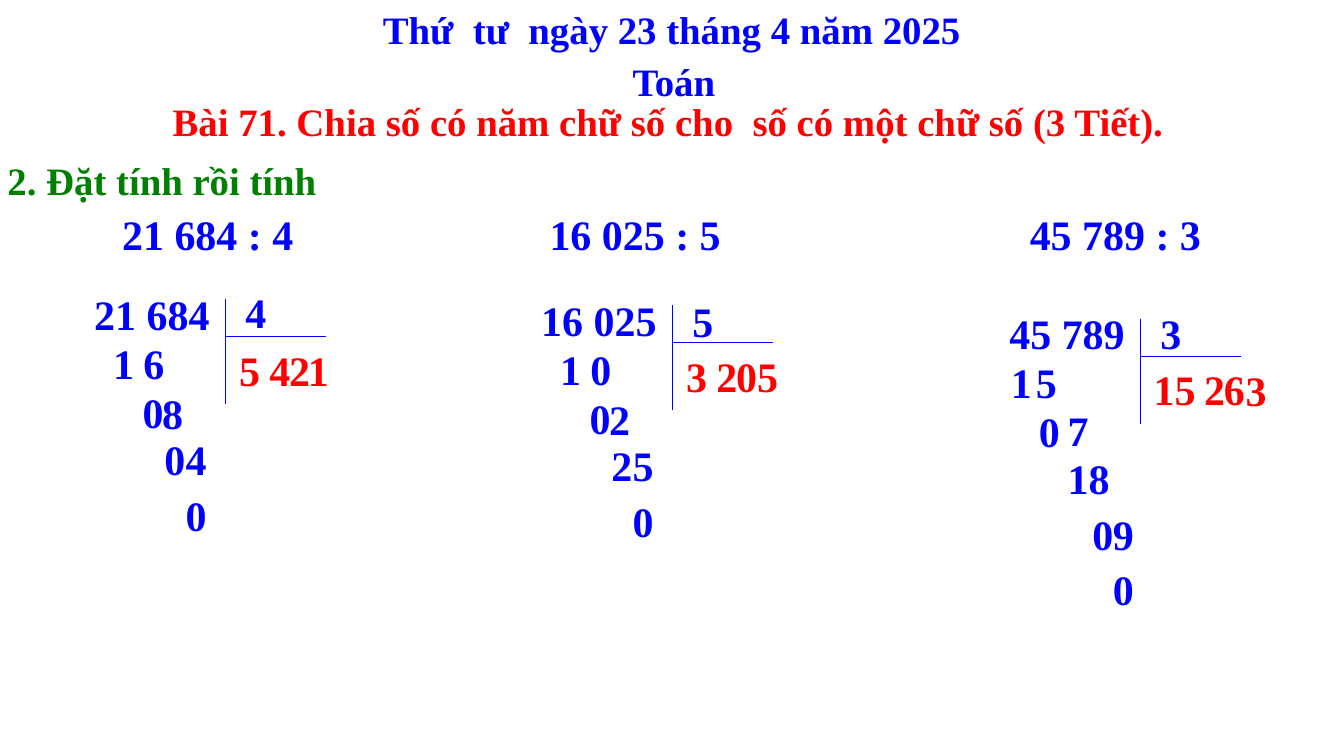
from dataclasses import dataclass

from lxml.etree import SubElement
from pptx import Presentation
from pptx.dml.color import RGBColor
from pptx.enum.shapes import MSO_CONNECTOR
from pptx.enum.text import MSO_ANCHOR, MSO_AUTO_SIZE, PP_ALIGN
from pptx.oxml.ns import qn
from pptx.util import Inches, Pt


@dataclass(frozen=True)
class Theme:
    font: str = "Times New Roman"
    blue: RGBColor = RGBColor(0x00, 0x00, 0xFF)
    red: RGBColor = RGBColor(0xFF, 0x00, 0x00)
    green: RGBColor = RGBColor(0x00, 0x80, 0x00)
    heading: int = 37
    number: int = 40
    rule: float = 0.75


THEME = Theme()
DIGIT_WIDTH = 0.5
NUMBER_HEIGHT = 0.77
BAR = 1.83
QUOTIENT_TOP = 0.74


@dataclass(frozen=True)
class Division:
    left: float
    top: float
    dividend: str
    divisor: str
    divisor_shift: float
    digits: str
    cells: list


def short_cells(units):
    """Digit offsets for a four-digit quotient, in stacking order."""
    return [
        (1.92, QUOTIENT_TOP), (2.58, QUOTIENT_TOP), (units, QUOTIENT_TOP),
        (0.25, 0.65), (0.65, 0.65), (0.93, 1.92), (0.9, 1.31), (0.64, 1.3),
        (1.21, 1.92), (1.21, 2.66), (2.32, QUOTIENT_TOP),
    ]


# Digit offsets for a five-digit quotient, in stacking order
LONG_CELLS = [
    (1.91, QUOTIENT_TOP), (2.58, QUOTIENT_TOP), (2.84, QUOTIENT_TOP),
    (0.02, 0.65), (0.35, 0.65), (0.77, 1.92), (0.77, 1.28), (0.39, 1.29),
    (1.05, 1.92), (1.1, 2.66), (2.19, QUOTIENT_TOP), (1.37, 2.66),
    (3.13, 0.75), (1.37, 3.38),
]

DIVISIONS = [
    Division(1.15, 3.77, "21 684", "4", -0.03, "52116080404", short_cells(2.83)),
    Division(7.07, 3.85, "16 025", "5", 0.02, "30510220502", short_cells(2.86)),
    Division(13.27, 4.03, "45 789", "3", -0.01, "12615170805930", LONG_CELLS),
]


def format_text(box, text, size=THEME.number, color=THEME.blue,
                align=PP_ALIGN.LEFT, tabs=()):
    frame = box.text_frame
    frame.word_wrap = True
    frame.auto_size = MSO_AUTO_SIZE.NONE
    frame.vertical_anchor = MSO_ANCHOR.TOP
    para = frame.paragraphs[0]
    para.alignment = align
    para.space_before = Pt(0)
    if tabs:
        tab_list = SubElement(para._p.get_or_add_pPr(), qn("a:tabLst"))
        for tab in tabs:
            SubElement(tab_list, qn("a:tab"), pos=str(Inches(tab)), algn="l")
    span = para.add_run()
    span.text = text
    span.font.name = THEME.font
    span.font.size = Pt(size)
    span.font.bold = True
    span.font.color.rgb = color


def add_text(page, left, top, width, height, text, **style):
    box = page.shapes.add_textbox(
        Inches(left), Inches(top), Inches(width), Inches(height))
    format_text(box, text, **style)


def add_rule(page, left, top, right, bottom):
    rule = page.shapes.add_connector(
        MSO_CONNECTOR.STRAIGHT,
        Inches(left), Inches(top), Inches(right), Inches(bottom))
    rule.line.color.rgb = THEME.blue
    rule.line.width = Pt(THEME.rule)
    SubElement(rule._element.spPr, qn("a:effectLst"))


def add_heading(page, left, top, width):
    style = {"size": THEME.heading, "align": PP_ALIGN.CENTER}
    add_text(page, left + 0.03, top + 0.68, width, 0.74, "Toán", **style)
    add_text(page, left, top, width, 0.73,
             "Thứ  tư  ngày 23 tháng 4 năm 2025", **style)
    # Lesson title
    title = page.shapes.title
    title.left, title.top = Inches(left - 0.05), Inches(top + 1.22)
    title.width, title.height = Inches(width), Inches(0.72)
    format_text(title, "Bài 71. Chia số có năm chữ số cho  số có một chữ số (3 Tiết).",
                color=THEME.red, **style)


def add_exercise(page, left, top, width):
    # The three problems stand on tab stops
    problems = [f"\t{division.dividend} : {division.divisor}"
                for division in DIVISIONS]
    add_text(page, left, top + 0.7, width, NUMBER_HEIGHT, "".join(problems),
             tabs=[1.52, 7.18, 13.54])
    add_text(page, left, top, 4.32, 0.72, "2. Đặt tính rồi tính",
             size=THEME.heading, color=THEME.green)


def add_division(page, division):
    left, top = division.left, division.top
    # Dividend and divisor
    add_text(page, left, top, BAR, NUMBER_HEIGHT, division.dividend)
    add_text(page, left + 2, top + division.divisor_shift, 0.92,
             NUMBER_HEIGHT, division.divisor)
    # Division bracket
    bar = left + BAR
    add_rule(page, bar, top + 0.19, bar, top + 1.58)
    add_rule(page, bar, top + 0.69, bar + 1.34, top + 0.69)
    # Quotient digits right of the bar, remainder digits left of it
    for digit, (across, down) in zip(division.digits, division.cells):
        add_text(page, left + across, top + down, DIGIT_WIDTH, NUMBER_HEIGHT,
                 digit, color=THEME.red if across > BAR else THEME.blue)


def main():
    deck = Presentation()
    deck.slide_width, deck.slide_height = Inches(17.8), Inches(10)
    page = deck.slides.add_slide(deck.slide_layouts[5])
    add_exercise(page, 0, 2.02, 17.3)
    for division in DIVISIONS:
        add_division(page, division)
    add_heading(page, 0.01, 0.03, 17.77)
    deck.save("out.pptx")


if __name__ == "__main__":
    main()
